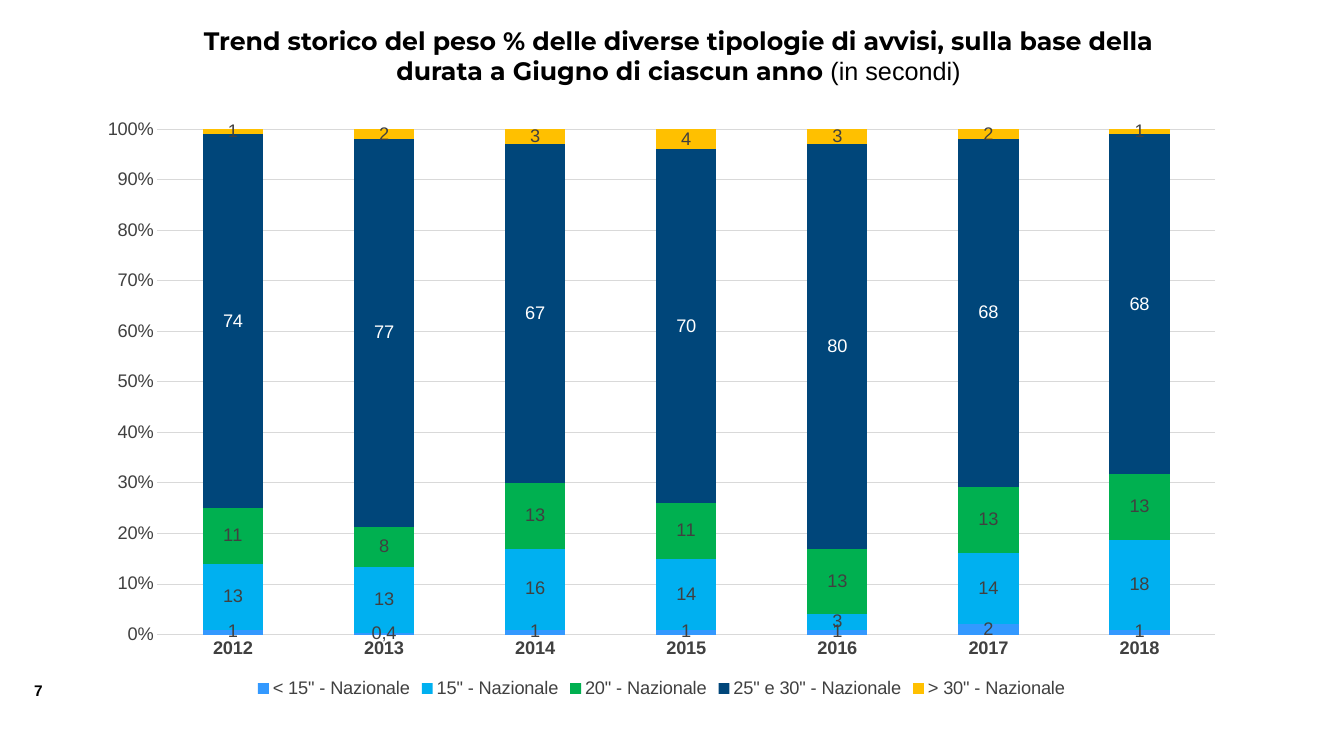
from lxml import etree
from pptx import Presentation
from pptx.chart.data import CategoryChartData
from pptx.dml.color import RGBColor
from pptx.enum.chart import XL_CHART_TYPE as ChartType
from pptx.enum.chart import XL_LABEL_POSITION as LabelPosition
from pptx.enum.chart import XL_LEGEND_POSITION as LegendPosition
from pptx.enum.chart import XL_TICK_MARK as TickMark
from pptx.enum.text import MSO_ANCHOR, MSO_AUTO_SIZE, PP_ALIGN
from pptx.oxml.ns import qn
from pptx.util import Inches, Pt

BLACK = RGBColor(0x00, 0x00, 0x00)
WHITE = RGBColor(0xFF, 0xFF, 0xFF)
GREY = RGBColor(0x40, 0x40, 0x40)
GRID = RGBColor(0xD9, 0xD9, 0xD9)
BLUE = RGBColor(0x33, 0x99, 0xFF)
CYAN = RGBColor(0x00, 0xB0, 0xF0)
GREEN = RGBColor(0x00, 0xB0, 0x50)
NAVY = RGBColor(0x00, 0x46, 0x7A)
YELLOW = RGBColor(0xFF, 0xC0, 0x00)

YEARS = ["2012", "2013", "2014", "2015", "2016", "2017", "2018"]
DURATIONS = [
    ('< 15" - Nazionale', [1, 0.4, 1, 1, 1, 2, 1], BLUE, GREY),
    ('15" - Nazionale', [13, 13, 16, 14, 3, 14, 18], CYAN, GREY),
    ('20" - Nazionale', [11, 8, 13, 11, 13, 13, 13], GREEN, GREY),
    ('25" e 30" - Nazionale', [74, 77, 67, 70, 80, 68, 68], NAVY, WHITE),
    ('> 30" - Nazionale', [1, 2, 3, 4, 3, 2, 1], YELLOW, GREY),
]
PLOT_AREA = {"x": 0.063, "y": 0.036, "w": 0.917, "h": 0.85}


def style_font(font, size, color, bold=False, name="Arial"):
    for key, value in {"size": Pt(size), "bold": bold, "name": name}.items():
        setattr(font, key, value)
    font.color.rgb = color


deck = Presentation()
deck.slide_width = Inches(13.33)
deck.slide_height = Inches(7.5)
page = deck.slides.add_slide(deck.slide_layouts[5])

title = page.shapes.title
title_place = {"left": 1.55, "top": 0.2, "width": 10.36, "height": 0.71}
for key, value in title_place.items():
    setattr(title, key, Inches(value))
title.fill.solid()
title.fill.fore_color.rgb = WHITE
frame = title.text_frame
frame.word_wrap = True
frame.auto_size = MSO_AUTO_SIZE.NONE
frame.vertical_anchor = MSO_ANCHOR.TOP
para = frame.paragraphs[0]
para.alignment = PP_ALIGN.CENTER
for text, bold, name in [
    ("Trend storico del peso % delle diverse tipologie di avvisi, sulla base "
     "della durata a Giugno di ciascun anno ", True, "Montserrat"),
    ("(in secondi)", False, "Arial"),
]:
    span = para.add_run()
    span.text = text
    style_font(span.font, 18, BLACK, bold, name)

data = CategoryChartData(number_format="0%")
data.categories = YEARS
for name, percents, color, label_color in DURATIONS:
    data.add_series(name, [round(percent / 100, 3) for percent in percents])
chart = page.shapes.add_chart(
    ChartType.COLUMN_STACKED_100,
    Inches(0.84), Inches(1.07), Inches(11.44), Inches(5.9), data,
).chart
chart.has_title = False
style_font(chart.font, 13, GREY)

chart.has_legend = True
chart.legend.position = LegendPosition.BOTTOM
chart.legend.include_in_layout = False
style_font(chart.legend.font, 13, GREY)

for axis, bold in [(chart.category_axis, True), (chart.value_axis, False)]:
    axis.major_tick_mark = TickMark.NONE
    axis.minor_tick_mark = TickMark.NONE
    style_font(axis.tick_labels.font, 13, GREY, bold)
chart.value_axis.has_major_gridlines = True
chart.value_axis.maximum_scale = 1
chart.value_axis.minimum_scale = 0
chart.value_axis.major_unit = 0.1
chart.value_axis.tick_labels.number_format = "0%"
chart.value_axis.tick_labels.number_format_is_linked = False
chart.value_axis.format.line.fill.background()
for line in (chart.category_axis.format.line,
             chart.value_axis.major_gridlines.format.line):
    line.color.rgb = GRID
    line.width = Pt(0.75)

plot = chart.plots[0]
plot.gap_width = 150
plot.overlap = 100
plot.vary_by_categories = False
for series, (name, percents, color, label_color) in zip(plot.series, DURATIONS):
    series.format.fill.solid()
    series.format.fill.fore_color.rgb = color
    labels = series.data_labels
    labels.show_value = True
    labels.position = LabelPosition.CENTER
    style_font(labels.font, 13, label_color)
    for index, percent in enumerate(percents):
        label = series.points[index].data_label
        span = label.text_frame.paragraphs[0].add_run()
        span.text = f"{percent:g}".replace(".", ",")
        style_font(span.font, 13, label_color)
        label.position = LabelPosition.CENTER

plot_area = chart.element.find(".//" + qn("c:plotArea"))
layout = plot_area.find(qn("c:layout"))
if layout is None:
    layout = etree.Element(qn("c:layout"))
    plot_area.insert(0, layout)
manual = etree.SubElement(layout, qn("c:manualLayout"))
settings = {"layoutTarget": "inner", "xMode": "edge", "yMode": "edge", **PLOT_AREA}
for tag, value in settings.items():
    etree.SubElement(manual, qn("c:" + tag)).set("val", str(value))

number = page.shapes.add_textbox(Inches(0.24), Inches(6.71), Inches(0.42), Inches(0.29))
number.text_frame.word_wrap = False
number.text_frame.auto_size = MSO_AUTO_SIZE.SHAPE_TO_FIT_TEXT
span = number.text_frame.paragraphs[0].add_run()
span.text = "7"
style_font(span.font, 11, BLACK, True)

deck.save("out.pptx")
